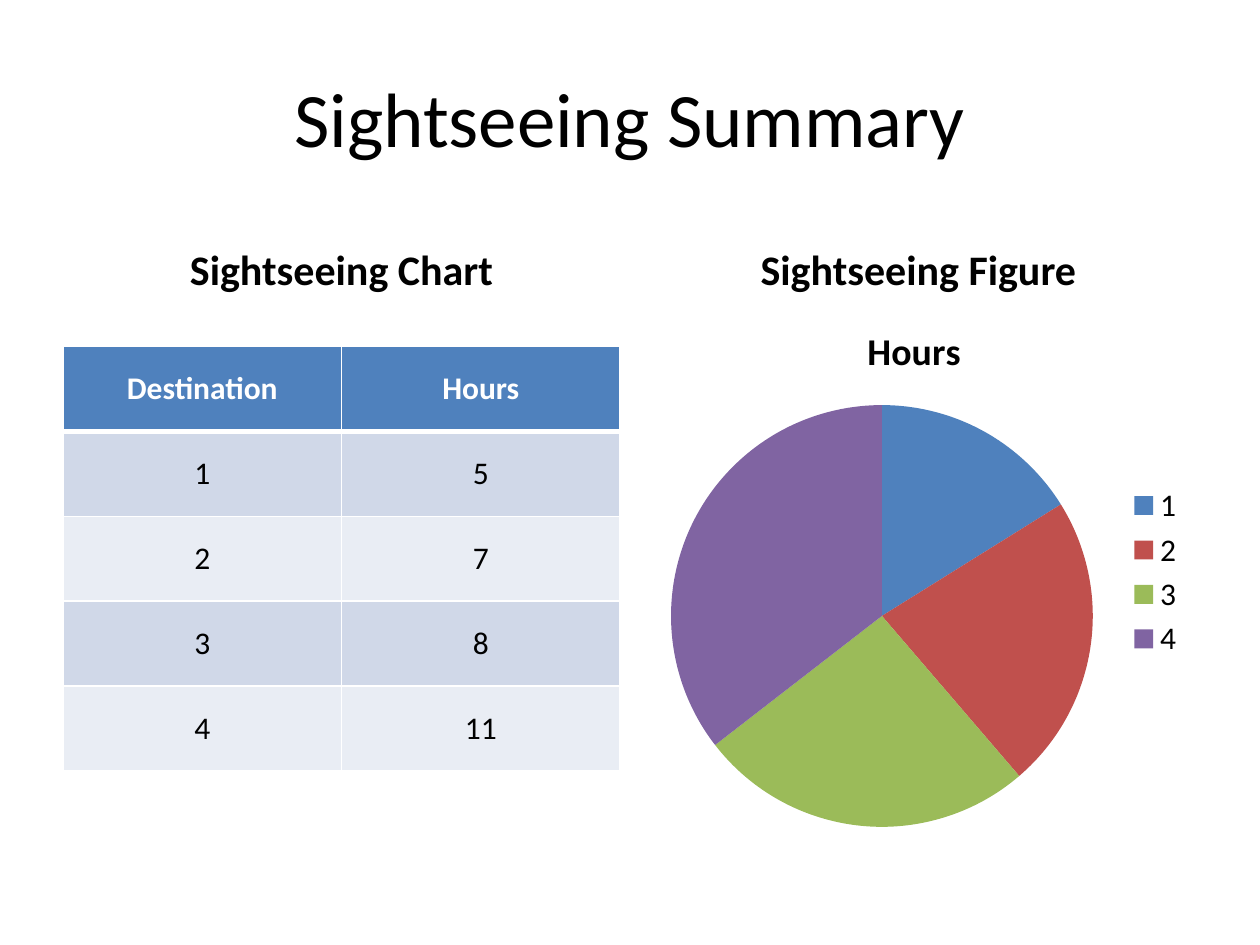
from lxml.etree import SubElement
from pptx import Presentation
from pptx.chart.data import CategoryChartData
from pptx.dml.color import RGBColor
from pptx.enum.chart import XL_CHART_TYPE, XL_LEGEND_POSITION
from pptx.enum.text import MSO_ANCHOR, PP_ALIGN
from pptx.oxml.ns import qn
from pptx.util import Cm, Pt

FONT = "Calibri"
COLORS = {
    "text": "000000",
    "white": "FFFFFF",
    "header": "4F81BD",
    "odd_row": "D0D8E8",
    "even_row": "E9EDF4",
}
SLICE_COLORS = ["4F81BD", "C0504D", "9BBB59", "8064A2"]
HOURS = {"1": 5, "2": 7, "3": 8, "4": 11}

LEFT_COLUMN = 1.27
RIGHT_COLUMN = 12.9
COLUMN_WIDTH = 11.23
ROW_HEIGHT = 1.71


def style_font(font, size, color, bold=False):
    font.name = FONT
    font.size = Pt(size)
    font.bold = bold
    font.color.rgb = RGBColor.from_string(color)


def write_centered(text_frame, text, size, color, bold=False):
    paragraph = text_frame.paragraphs[0]
    paragraph.alignment = PP_ALIGN.CENTER
    run = paragraph.add_run()
    run.text = text
    style_font(run.font, size, color, bold)


def add_heading(slide, text, left, top, width, height, size, anchor, bold=False):
    shape = slide.shapes.add_textbox(Cm(left), Cm(top), Cm(width), Cm(height))
    shape.text_frame.word_wrap = True
    shape.text_frame.vertical_anchor = anchor
    write_centered(shape.text_frame, text, size, COLORS["text"], bold)


def set_borders(cell, top, bottom):
    properties = cell._tc.get_or_add_tcPr()
    for side, width in {"L": 1, "R": 1, "T": top, "B": bottom}.items():
        line = SubElement(properties, qn(f"a:ln{side}"), w=str(Pt(width)))
        fill = SubElement(line, qn("a:solidFill"))
        SubElement(fill, qn("a:srgbClr"), val=COLORS["white"])


def add_hours_table(slide):
    rows = [("Destination", "Hours")]
    rows += [(destination, str(hours)) for destination, hours in HOURS.items()]
    table = slide.shapes.add_table(
        len(rows), 2, Cm(LEFT_COLUMN), Cm(6.99),
        Cm(COLUMN_WIDTH), Cm(ROW_HEIGHT * len(rows)),
    ).table
    for row_index, values in enumerate(rows):
        is_header = row_index == 0
        fill = "header" if is_header else "odd_row" if row_index % 2 else "even_row"
        color = COLORS["white" if is_header else "text"]
        for column_index, value in enumerate(values):
            cell = table.cell(row_index, column_index)
            set_borders(cell, 3 if row_index == 1 else 1, 3 if is_header else 1)
            cell.fill.solid()
            cell.fill.fore_color.rgb = RGBColor.from_string(COLORS[fill])
            cell.vertical_anchor = MSO_ANCHOR.MIDDLE
            write_centered(cell.text_frame, value, 18, color, is_header)


def add_hours_pie(slide):
    chart_data = CategoryChartData()
    chart_data.categories = list(HOURS)
    chart_data.add_series("Hours ", list(HOURS.values()))
    chart = slide.shapes.add_chart(
        XL_CHART_TYPE.PIE, Cm(RIGHT_COLUMN), Cm(6.05),
        Cm(COLUMN_WIDTH), Cm(10.97), chart_data,
    ).chart
    style_font(chart.font, 18, COLORS["text"])

    chart.has_title = True
    write_centered(chart.chart_title.text_frame, "Hours ", 21.6, COLORS["text"], True)
    chart.chart_title.include_in_layout = False

    chart.has_legend = True
    chart.legend.position = XL_LEGEND_POSITION.RIGHT
    chart.legend.include_in_layout = False

    plot = chart.plots[0]
    plot.vary_by_categories = True
    for index, color in enumerate(SLICE_COLORS):
        fill = plot.series[0].points[index].format.fill
        fill.solid()
        fill.fore_color.rgb = RGBColor.from_string(color)


def main():
    presentation = Presentation()
    presentation.slide_width = Cm(25.4)
    presentation.slide_height = Cm(19.05)
    slide = presentation.slides.add_slide(presentation.slide_layouts[6])

    add_heading(slide, "Sightseeing Summary", LEFT_COLUMN, 0.76, 22.86, 3.18,
                44, MSO_ANCHOR.MIDDLE)
    for text, left in [("Sightseeing Chart", LEFT_COLUMN),
                       ("Sightseeing Figure", RIGHT_COLUMN)]:
        add_heading(slide, text, left, 4.27, COLUMN_WIDTH, 1.78,
                    24, MSO_ANCHOR.BOTTOM, bold=True)
    add_hours_table(slide)
    add_hours_pie(slide)

    presentation.save("out.pptx")


if __name__ == "__main__":
    main()
